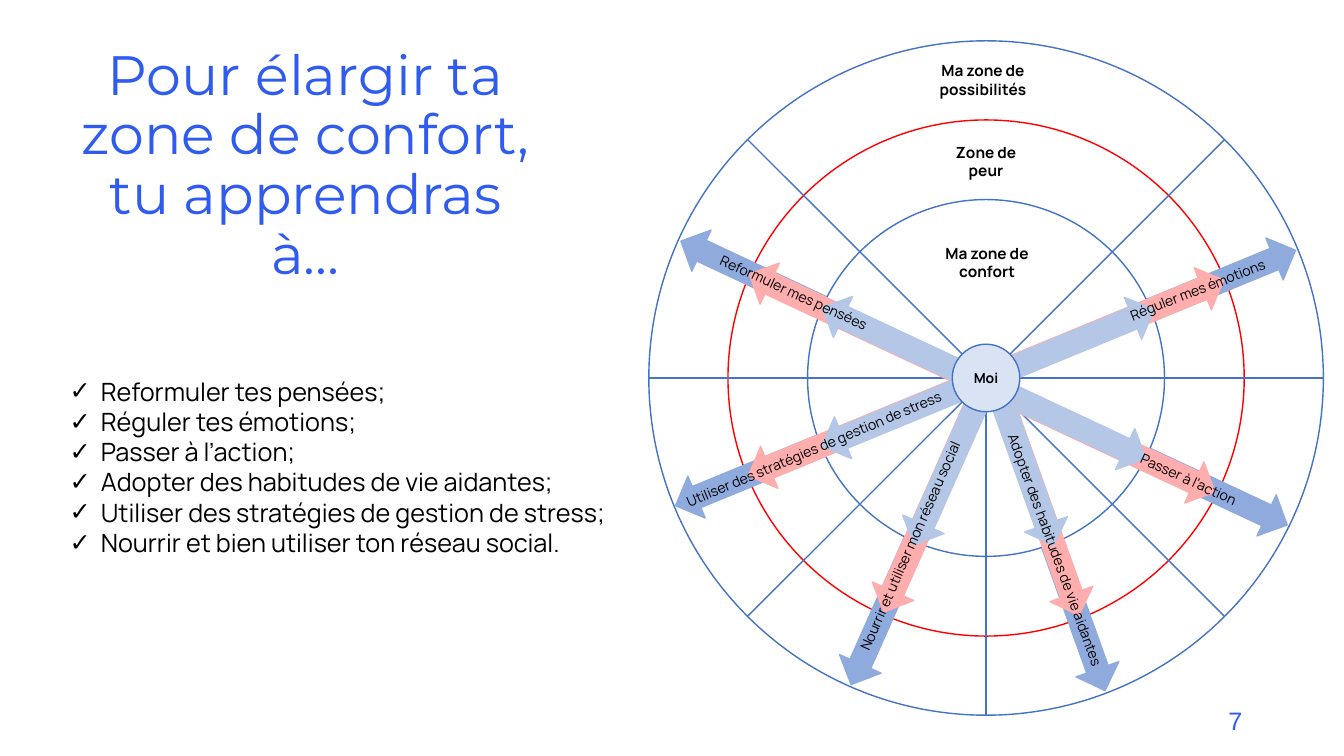
from math import cos, radians, sin

from lxml.etree import SubElement
from pptx import Presentation
from pptx.dml.color import RGBColor
from pptx.enum.shapes import MSO_CONNECTOR, MSO_SHAPE
from pptx.enum.text import MSO_ANCHOR, MSO_AUTO_SIZE, PP_ALIGN
from pptx.oxml.ns import qn
from pptx.util import Inches, Pt

CELL = 0.1  # inches per grid column and row
COLORS = {
    "title": "2F5CEE", "text": "000000", "paper": "FFFFFF", "line": "4472C4",
    "fear": "FF0000", "possible": "8FAADC", "brave": "FFADAD",
    "comfort": "B4C7E7", "self": "DAE3F3",
}
HUB = (97.8, 37.5)
RADIUS = 33.45
ARROW_HEIGHT = 4.5
LABEL_HEIGHT = 2.8

SKILLS = [
    "Reformuler tes pensées;", "Réguler tes émotions;", "Passer à l’action;",
    "Adopter des habitudes de vie aidantes;",
    "Utiliser des stratégies de gestion de stress;",
    "Nourrir et bien utiliser ton réseau social.",
]
# rotation, then (centre column, centre row, length) for each zone reached
ARROWS = [
    (25.1, {"possible": (97.6, 38, 66.4), "brave": (97.4, 38, 51),
            "comfort": (97.6, 38, 35.4)}),
    (337.6, {"possible": (97.75, 37.5, 66.5), "brave": (97.8, 37.5, 51),
             "comfort": (98, 37.5, 35.6)}),
    (294, {"possible": (92.1, 50.65, 37.8), "brave": (93.25, 48.15, 27.5),
           "comfort": (94.55, 45.35, 19.1)}),
    (250.3, {"possible": (103.35, 51.05, 37.1), "brave": (102.4, 48.15, 27.4),
             "comfort": (101.25, 45.05, 19.3)}),
]
# wording, centre column, centre row, width
ZONE_LABELS = [
    ("Ma zone de possibilités", 97.5, 7, 18.5),
    ("Ma zone de confort", 97.9, 25.1, 15.8),
    ("Zone de peur", 97.8, 15.1, 11.6),
]
# wording, centre column, centre row, width, rotation, alignment
ARROW_LABELS = [
    ("Reformuler mes pensées", 78.7, 29.1, 25.2, 24.6, PP_ALIGN.CENTER),
    ("Passer à l’action", 118.5, 47.9, 13.6, 24.7, PP_ALIGN.LEFT),
    ("Utiliser des stratégies de gestion de stress",
     80.75, 44.6, 30.1, 337.2, PP_ALIGN.CENTER),
    ("Réguler mes émotions", 118.8, 28.8, 20.2, 338.5, PP_ALIGN.CENTER),
    ("Nourrir et utiliser mon réseau social",
     90.3, 54.2, 29.2, 293.8, PP_ALIGN.CENTER),
    ("Adopter des habitudes de vie aidantes",
     104.6, 54.6, 29.8, 69.8, PP_ALIGN.CENTER),
]


def grid(cells):
    return Inches(cells * CELL)


def centred(column, row, width, height):
    """Return left, top, width and height of a box around a centre."""
    return column - width / 2, row - height / 2, width, height


class SlideBuilder:
    def __init__(self, slide, font="Manrope"):
        self.slide = slide
        self.font = font

    def color(self, name):
        return RGBColor.from_string(COLORS[name])

    def fill_text(self, shape, text, size, color="text", font=None, bold=False,
                  align=PP_ALIGN.CENTER, anchor=MSO_ANCHOR.TOP, spacing=1.0):
        frame = shape.text_frame
        frame.text = text
        frame.word_wrap = True
        frame.auto_size = MSO_AUTO_SIZE.NONE
        frame.vertical_anchor = anchor
        for paragraph in frame.paragraphs:
            paragraph.alignment = align
            paragraph.line_spacing = spacing
            paragraph.space_before = Pt(0)
            for run in paragraph.runs:
                run.font.name = font or self.font
                run.font.size = Pt(size)
                run.font.bold = bold
                run.font.color.rgb = self.color(color)
        return frame

    def place(self, shape, box):
        shape.left, shape.top, shape.width, shape.height = map(grid, box)

    def title(self, text, box):
        shape = self.slide.shapes.title
        self.place(shape, box)
        frame = self.fill_text(shape, text, 39.6, "title", "Montserrat",
                               anchor=MSO_ANCHOR.MIDDLE, spacing=0.9)
        frame.margin_bottom = grid(6.5)

    def checklist(self, items, box):
        shape = self.slide.placeholders[1]
        self.place(shape, box)
        frame = self.fill_text(shape, "\n".join(items), 18,
                               align=PP_ALIGN.LEFT)
        frame.margin_top = grid(3.5)
        frame.margin_right = 0
        for paragraph in frame.paragraphs:
            properties = paragraph._p.get_or_add_pPr()
            properties.set("marL", str(grid(3.1)))
            properties.set("indent", str(-grid(3.1)))
            SubElement(properties, qn("a:buChar")).set("char", "✓")

    def text(self, text, box, size, rotation=0, side_margin=1, **style):
        shape = self.slide.shapes.add_textbox(*map(grid, box))
        shape.rotation = rotation
        frame = self.fill_text(shape, text, size, **style)
        frame.margin_left = frame.margin_right = grid(side_margin)

    def shape(self, kind, box, fill, line, rotation=0):
        shape = self.slide.shapes.add_shape(kind, *map(grid, box))
        shape.shadow.inherit = False
        shape.rotation = rotation
        shape.fill.solid()
        shape.fill.fore_color.rgb = self.color(fill)
        shape.line.color.rgb = self.color(line)
        shape.line.width = Pt(1)
        return shape

    def circle(self, diameter, fill="paper", line="line"):
        return self.shape(MSO_SHAPE.OVAL, centred(*HUB, diameter, diameter),
                          fill, line)

    def arrow(self, zone, rotation, column, row, length):
        box = centred(column, row, length, ARROW_HEIGHT)
        self.shape(MSO_SHAPE.LEFT_RIGHT_ARROW, box, zone, zone, rotation)

    def spoke(self, angle, inner):
        """Draw a line from the rim to a signed distance from the hub."""
        direction = cos(radians(angle)), sin(radians(angle))
        ends = [grid(middle + distance * part)
                for distance in (RADIUS, inner)
                for middle, part in zip(HUB, direction)]
        line = self.slide.shapes.add_connector(MSO_CONNECTOR.STRAIGHT, *ends)
        line.line.color.rgb = self.color("line")
        line.line.width = Pt(1)
        SubElement(line._element.spPr, qn("a:effectLst"))


def draw_wheel(builder):
    builder.circle(2 * RADIUS)
    builder.circle(51.2, line="fear")
    for rotation, zones in ARROWS:
        builder.arrow("possible", rotation, *zones["possible"])
    builder.circle(35.4)
    for angle in (0, 45, 135):
        builder.spoke(angle, -RADIUS)
    builder.spoke(90, 3.4)
    for rotation, zones in ARROWS:
        for zone in ("brave", "comfort"):
            builder.arrow(zone, rotation, *zones[zone])
    for text, column, row, width in ZONE_LABELS:
        builder.text(text, centred(column, row, width, LABEL_HEIGHT), 11,
                     side_margin=(width - 9.3) / 2, bold=True)
    for text, column, row, width, rotation, align in ARROW_LABELS:
        builder.text(text, centred(column, row, width, LABEL_HEIGHT), 10,
                     rotation, align=align)
    hub = builder.circle(6.7, fill="self")
    frame = builder.fill_text(hub, "Moi", 10, bold=True,
                              anchor=MSO_ANCHOR.MIDDLE)
    frame.margin_left = frame.margin_right = 0


def main():
    presentation = Presentation()
    presentation.slide_width = Inches(13.33)
    presentation.slide_height = Inches(7.5)
    slide = presentation.slides.add_slide(presentation.slide_layouts[1])
    builder = SlideBuilder(slide)
    builder.title("Pour élargir ta zone de confort, tu apprendras à…",
                  (5.8, 12.3, 49, 14.5))
    builder.text("7", (94.2, 69.5, 30, 4), 18, color="title", font="Arial",
                 align=PP_ALIGN.RIGHT)
    builder.checklist(SKILLS, (5.9, 33.8, 55.2, 22.2))
    draw_wheel(builder)
    presentation.save("out.pptx")


if __name__ == "__main__":
    main()
